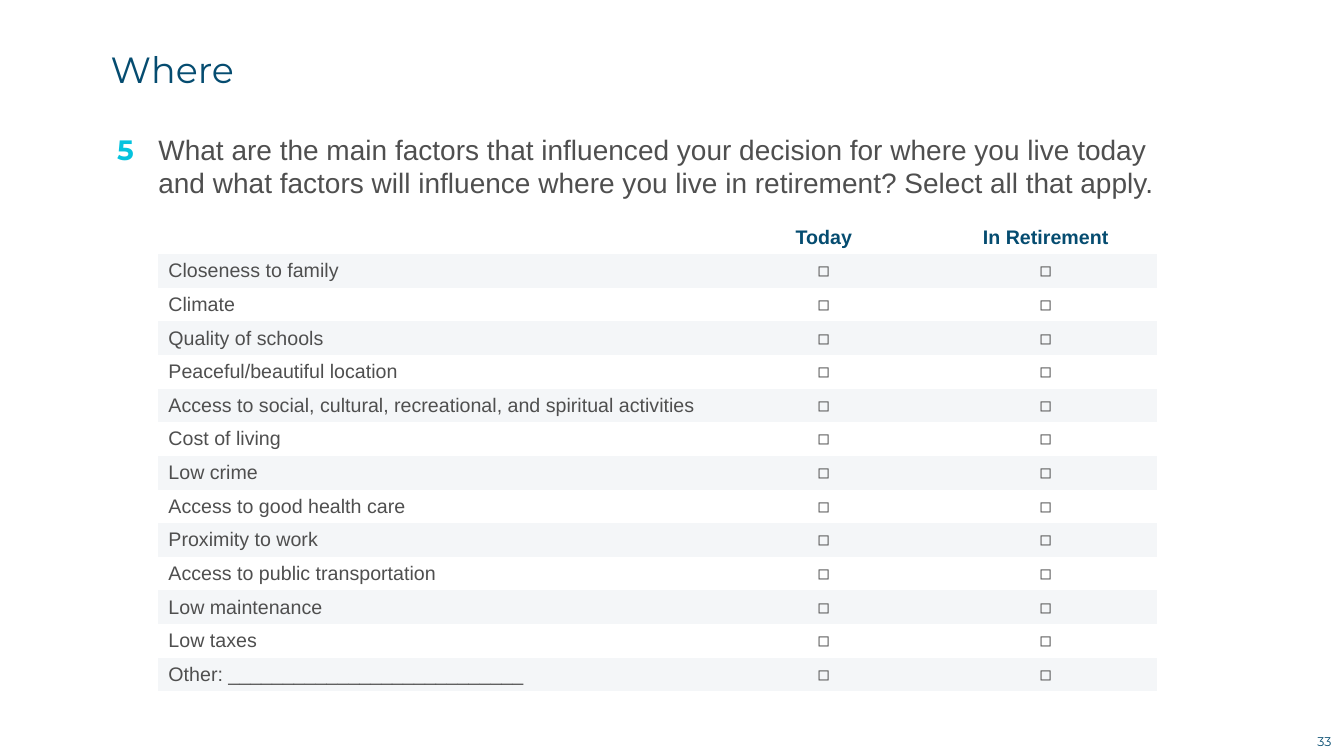
from dataclasses import dataclass

from pptx import Presentation
from pptx.dml.color import RGBColor
from pptx.enum.text import MSO_ANCHOR, PP_ALIGN
from pptx.oxml.ns import qn
from pptx.util import Cm, Pt


@dataclass(frozen=True)
class Theme:
    navy: RGBColor = RGBColor.from_string("054C70")
    cyan: RGBColor = RGBColor.from_string("05C3DE")
    grey: RGBColor = RGBColor.from_string("4F4F4F")
    band: RGBColor = RGBColor.from_string("F4F6F8")
    heading_font: str = "Montserrat"
    body_font: str = "Arial"
    title_size: Pt = Pt(26)
    question_size: Pt = Pt(20)
    table_size: Pt = Pt(14)
    number_size: Pt = Pt(9)


THEME = Theme()
NO_STYLE_NO_GRID = "{2D5ABB26-0587-4C30-8999-92F81FD0307C}"
CHECKBOX = "◻︎"
HEADERS = ["", "Today", "In Retirement"]
COLUMN_WIDTHS = [Cm(13.97), Cm(5.59), Cm(5.59)]
FACTORS = [
    "Closeness to family",
    "Climate",
    "Quality of schools",
    "Peaceful/beautiful location",
    "Access to social, cultural, recreational, and spiritual activities",
    "Cost of living",
    "Low crime",
    "Access to good health care",
    "Proximity to work",
    "Access to public transportation",
    "Low maintenance",
    "Low taxes",
    "Other: ___________________________",
]
QUESTION = (
    "What are the main factors that influenced your decision for where you live today "
    "and what factors will influence where you live in retirement? Select all that apply."
)


def style_paragraph(paragraph, name, size, color, bold=False, align=PP_ALIGN.LEFT):
    paragraph.alignment = align
    paragraph.font.name = name
    paragraph.font.size = size
    paragraph.font.bold = bold
    paragraph.font.color.rgb = color


def add_text(slide, text, left, top, width, height, name, size, color,
             bold=False, align=PP_ALIGN.LEFT, anchor=MSO_ANCHOR.TOP, side_inset=Cm(0)):
    shape = slide.shapes.add_textbox(left, top, width, height)
    frame = shape.text_frame
    frame.word_wrap = True
    frame.vertical_anchor = anchor
    frame.margin_left = frame.margin_right = side_inset
    frame.margin_top = frame.margin_bottom = Cm(0)
    frame.text = text
    style_paragraph(frame.paragraphs[0], name, size, color, bold, align)


def fill_cell(cell, text, color, bold, align, banded):
    cell.text = text
    cell.vertical_anchor = MSO_ANCHOR.MIDDLE
    cell.margin_top = cell.margin_bottom = Cm(0)
    if banded:
        cell.fill.solid()
        cell.fill.fore_color.rgb = THEME.band
    else:
        cell.fill.background()
    style_paragraph(cell.text_frame.paragraphs[0], THEME.body_font, THEME.table_size,
                    color, bold, align)


def add_factor_table(slide):
    rows = [HEADERS] + [[factor, CHECKBOX, CHECKBOX] for factor in FACTORS]
    table = slide.shapes.add_table(len(rows), len(HEADERS), Cm(3.99), Cm(5.56),
                                   sum(COLUMN_WIDTHS), Cm(11.86)).table
    table.first_row = table.horz_banding = False
    table._tbl.tblPr.find(qn("a:tableStyleId")).text = NO_STYLE_NO_GRID
    for column, width in zip(table.columns, COLUMN_WIDTHS):
        column.width = width
    for row_index, row in enumerate(rows):
        color = THEME.grey if row_index else THEME.navy
        for column_index, text in enumerate(row):
            is_choice = column_index > 0
            fill_cell(table.cell(row_index, column_index), text, color, bold=is_choice,
                      align=PP_ALIGN.CENTER if is_choice else PP_ALIGN.LEFT,
                      banded=row_index % 2 == 1)


def main():
    presentation = Presentation()
    presentation.slide_width = Cm(33.86)
    presentation.slide_height = Cm(19.05)
    slide = presentation.slides.add_slide(presentation.slide_layouts[6])

    add_text(slide, "33", Cm(32.94), Cm(18.36), Cm(0.86), Cm(0.64), THEME.heading_font,
             THEME.number_size, THEME.navy, align=PP_ALIGN.CENTER, anchor=MSO_ANCHOR.MIDDLE)
    add_text(slide, "Where", Cm(2.54), Cm(0.71), Cm(29.21), Cm(2.06), THEME.heading_font,
             THEME.title_size, THEME.navy, anchor=MSO_ANCHOR.MIDDLE, side_inset=Cm(0.25))
    add_text(slide, QUESTION, Cm(3.99), Cm(3.33), Cm(26.16), Cm(1.7), THEME.body_font,
             THEME.question_size, THEME.grey)
    add_text(slide, "5", Cm(2.95), Cm(3.33), Cm(1.02), Cm(0.86), THEME.heading_font,
             THEME.question_size, THEME.cyan, bold=True)
    add_factor_table(slide)
    presentation.save("out.pptx")


if __name__ == "__main__":
    main()
